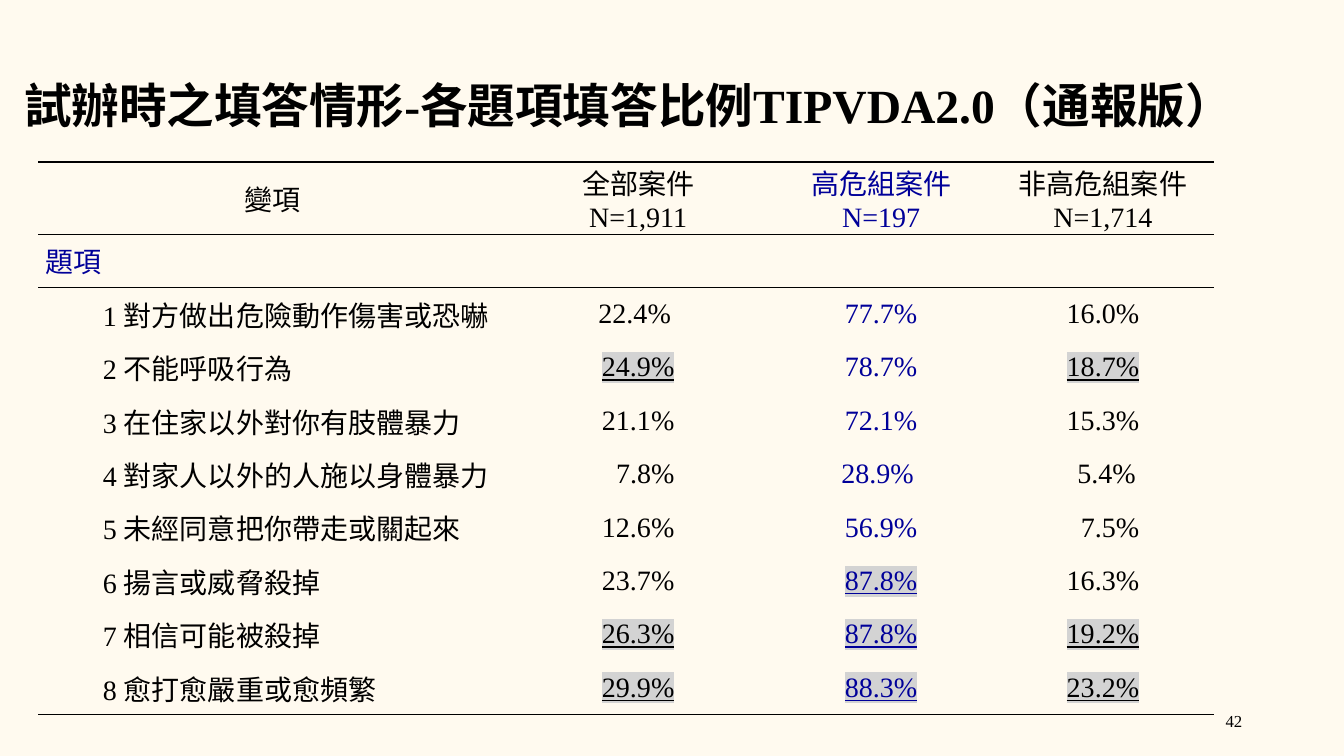
from dataclasses import dataclass

from lxml import etree
from pptx import Presentation
from pptx import util as u
from pptx.dml.color import RGBColor
from pptx.enum import text
from pptx.oxml.ns import qn


@dataclass(frozen=True)
class Theme:
    """Colours, type sizes and font of the slide."""
    background: str = "FFFAEF"
    ink: str = "000000"
    accent: str = "000099"
    highlight: str = "D3D3D3"
    font: str = "Times New Roman"
    title: int = 34
    body: int = 20
    footer: int = 12
    plain_table: str = "{2D5ABB26-0587-4C30-8999-92F81FD0307C}"


HEADERS = ("變項", "全部案件\nN=1,911", "高危組案件\nN=197", "非高危組案件\nN=1,714")
ITEMS = (
    ("1 對方做出危險動作傷害或恐嚇", "22.4% ", "77.7%", "16.0%"),
    ("2 不能呼吸行為", "24.9%", "78.7%", "18.7%"),
    ("3 在住家以外對你有肢體暴力", "21.1%", "72.1%", "15.3%"),
    ("4 對家人以外的人施以身體暴力", "7.8%", "28.9% ", "5.4% "),
    ("5 未經同意把你帶走或關起來", "12.6%", "56.9%", "7.5%"),
    ("6 揚言或威脅殺掉", "23.7%", "87.8%", "16.3%"),
    ("7 相信可能被殺掉", "26.3%", "87.8%", "19.2%"),
    ("8 愈打愈嚴重或愈頻繁", "29.9%", "88.3%", "23.2%"),
)
MARKED = {2: (1, 3), 6: (2,), 7: (1, 2, 3), 8: (1, 2, 3)}
COLUMN_WIDTHS = (4.64, 2.62, 2.2, 2.2)
HEADER_HEIGHT, ROW_HEIGHT = 0.71, 0.53
HIGH_RISK = 2
CENTER = text.PP_ALIGN.CENTER


def write(frame, content, *, theme, size, color=None, bold=False, marked=False,
          align=text.PP_ALIGN.LEFT, line_spacing=None, indent=None):
    """Fill a text frame with one paragraph per line of content."""
    for index, line in enumerate(content.split("\n")):
        para = frame.paragraphs[0] if index == 0 else frame.add_paragraph()
        para.alignment = align
        if line_spacing:
            para.line_spacing = line_spacing
        if indent:
            left, first = indent
            properties = para._p.get_or_add_pPr()
            properties.set("marL", str(u.Inches(left)))
            properties.set("indent", str(u.Inches(first)))
        span = para.add_run()
        span.text = line
        font = span.font
        font.name, font.size, font.bold = theme.font, u.Pt(size), bold
        font.color.rgb = RGBColor.from_string(color or theme.ink)
        if marked:
            font.underline = True
            highlight = etree.Element(qn("a:highlight"))
            etree.SubElement(highlight, qn("a:srgbClr"), val=theme.highlight)
            span._r.rPr.find(qn("a:solidFill")).addnext(highlight)


class SlideBuilder:
    """Holds the theme and the current slide and adds elements to it."""

    def __init__(self, page, theme):
        self.page, self.theme = page, theme
        fill = page.background.fill
        fill.solid()
        fill.fore_color.rgb = RGBColor.from_string(theme.background)

    def add_text(self, content, left, top, width, height, **style):
        """Add a vertically centred text box."""
        box = self.page.shapes.add_textbox(*map(u.Inches, (left, top, width, height)))
        box.text_frame.word_wrap = True
        box.text_frame.vertical_anchor = text.MSO_ANCHOR.MIDDLE
        write(box.text_frame, content, theme=self.theme, **style)

    def add_grid(self, left, top, widths, heights):
        """Add an unstyled table."""
        frame = self.page.shapes.add_table(
            len(heights), len(widths), u.Inches(left), u.Inches(top),
            u.Inches(sum(widths)), u.Inches(sum(heights)))
        table = frame.table
        table.first_row = table.horz_banding = False
        table._tbl.tblPr.find(qn("a:tableStyleId")).text = self.theme.plain_table
        for column, width in zip(table.columns, widths):
            column.width = u.Inches(width)
        for row, height in zip(table.rows, heights):
            row.height = u.Inches(height)
        return table

    def set_cell(self, cell, content, *, shift=0, **style):
        """Write a transparent cell, optionally moving its text right."""
        cell.margin_left, cell.margin_right = u.Inches(0.07 + shift), u.Inches(0.07)
        cell.margin_top = cell.margin_bottom = 0
        cell.vertical_anchor = text.MSO_ANCHOR.MIDDLE
        cell.fill.background()
        write(cell.text_frame, content, theme=self.theme, size=self.theme.body, **style)

    def rule_row(self, table, row, **edges):
        """Draw rules of the given point widths on edges lnT and lnB of a row."""
        for cell in table.rows[row].cells:
            properties = cell._tc.get_or_add_tcPr()
            for position, (edge, width) in enumerate(edges.items()):
                line = etree.Element(qn(f"a:{edge}"), w=str(u.Pt(width)))
                fill = etree.SubElement(line, qn("a:solidFill"))
                etree.SubElement(fill, qn("a:srgbClr"), val=self.theme.ink)
                properties.insert(position, line)


def main():
    """Build the response-rate slide."""
    theme = Theme()
    deck = Presentation()
    deck.slide_width, deck.slide_height = u.Inches(13.33), u.Inches(7.5)
    builder = SlideBuilder(deck.slides.add_slide(deck.slide_layouts[6]), theme)
    builder.add_text("試辦時之填答情形-各題項填答比例TIPVDA2.0（通報版）",
                     0.14, 0.35, 13.19, 1.45, size=theme.title, bold=True, line_spacing=0.9)
    builder.add_text("42", 9.42, 6.95, 3, 0.4, size=theme.footer, align=text.PP_ALIGN.RIGHT)

    heights = [HEADER_HEIGHT] + [ROW_HEIGHT] * (len(ITEMS) + 1)
    table = builder.add_grid(0.38, 1.61, COLUMN_WIDTHS, heights)
    colors = [theme.accent if column == HIGH_RISK else theme.ink
              for column in range(len(HEADERS))]
    for column, header in enumerate(HEADERS):
        builder.set_cell(table.cell(0, column), header, color=colors[column], align=CENTER)
    section = table.cell(1, 0)
    section.merge(table.cell(1, len(HEADERS) - 1))
    builder.set_cell(section, "題項", color=theme.accent)

    for number, (label, *rates) in enumerate(ITEMS, start=1):
        row = number + 1
        builder.set_cell(table.cell(row, 0), label, indent=(0.24, 0.33))
        for column, rate in enumerate(rates, start=1):
            single_digit = rate.index(".") == 1
            builder.set_cell(table.cell(row, column), rate, color=colors[column],
                             align=CENTER, shift=0.14 if single_digit else 0,
                             marked=column in MARKED.get(number, ()))
    builder.rule_row(table, 0, lnT=1.5, lnB=0.5)
    builder.rule_row(table, 1, lnT=0.5)
    builder.rule_row(table, len(heights) - 1, lnB=1.5)
    deck.save("out.pptx")


if __name__ == "__main__":
    main()
